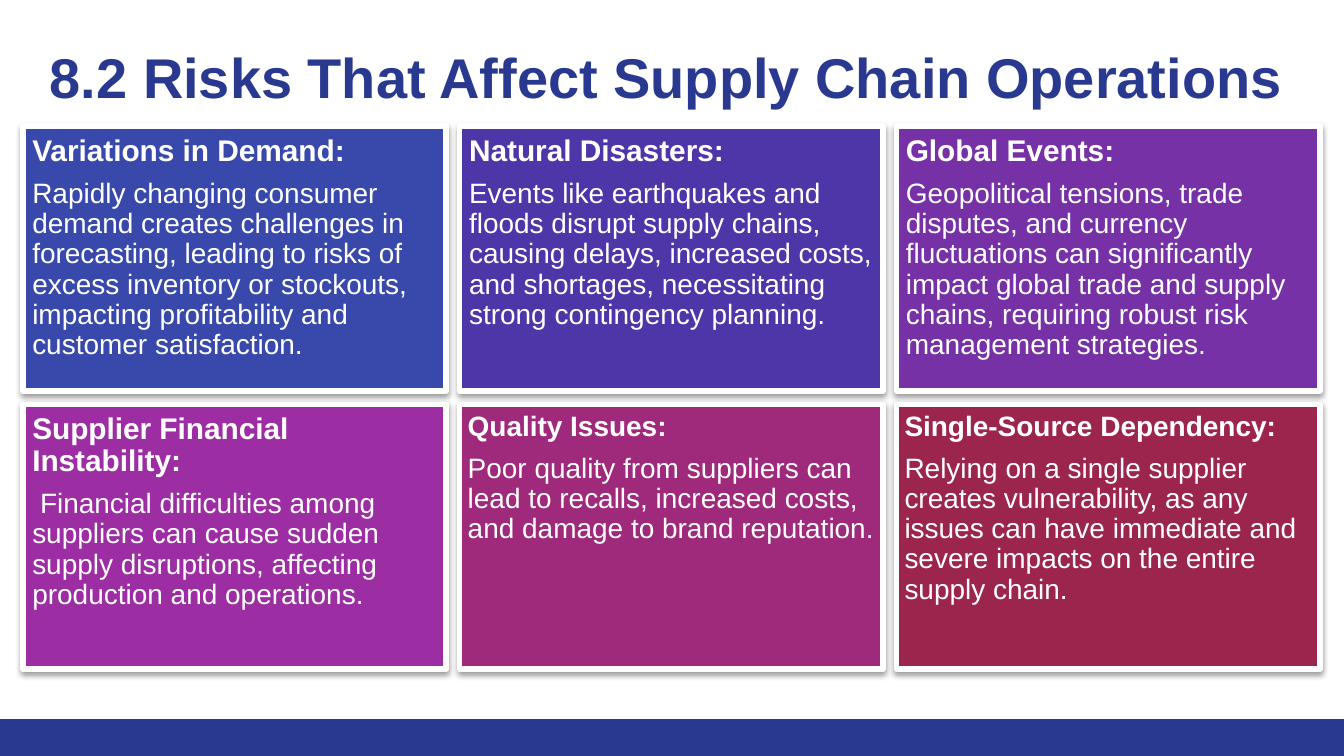
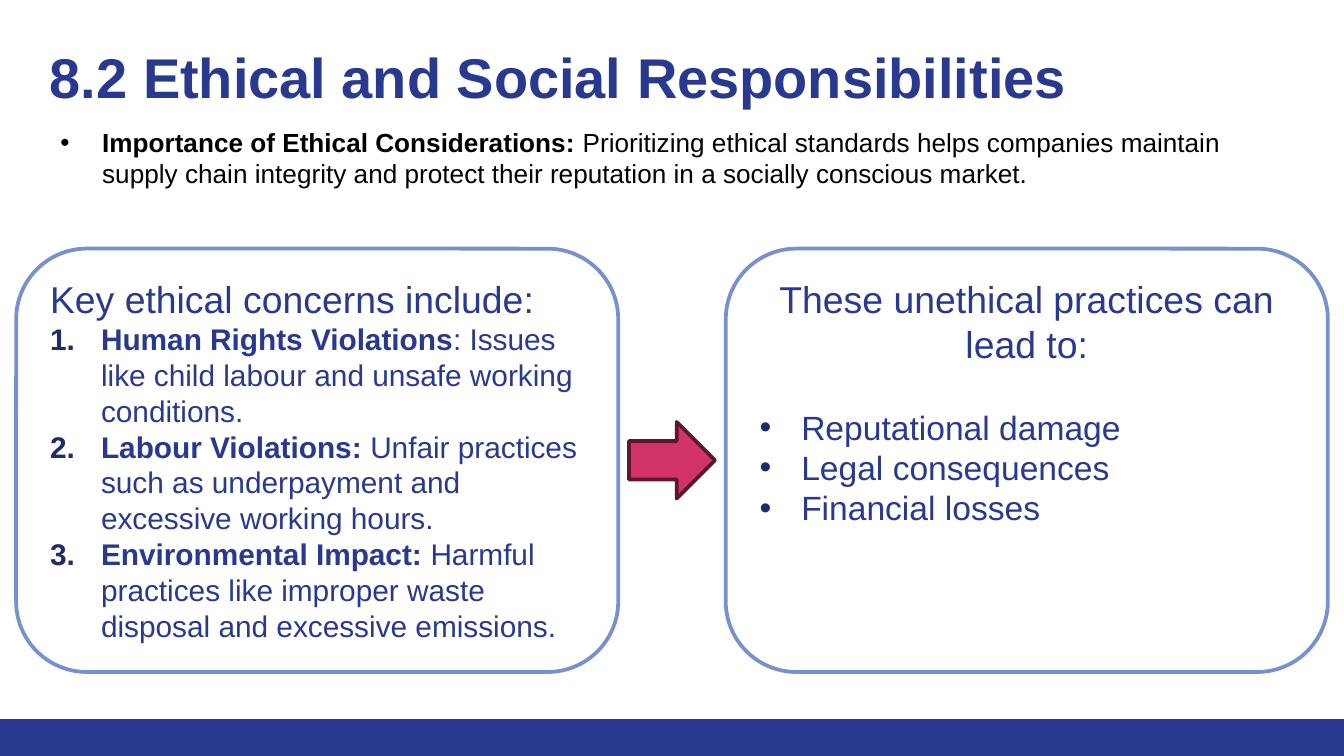
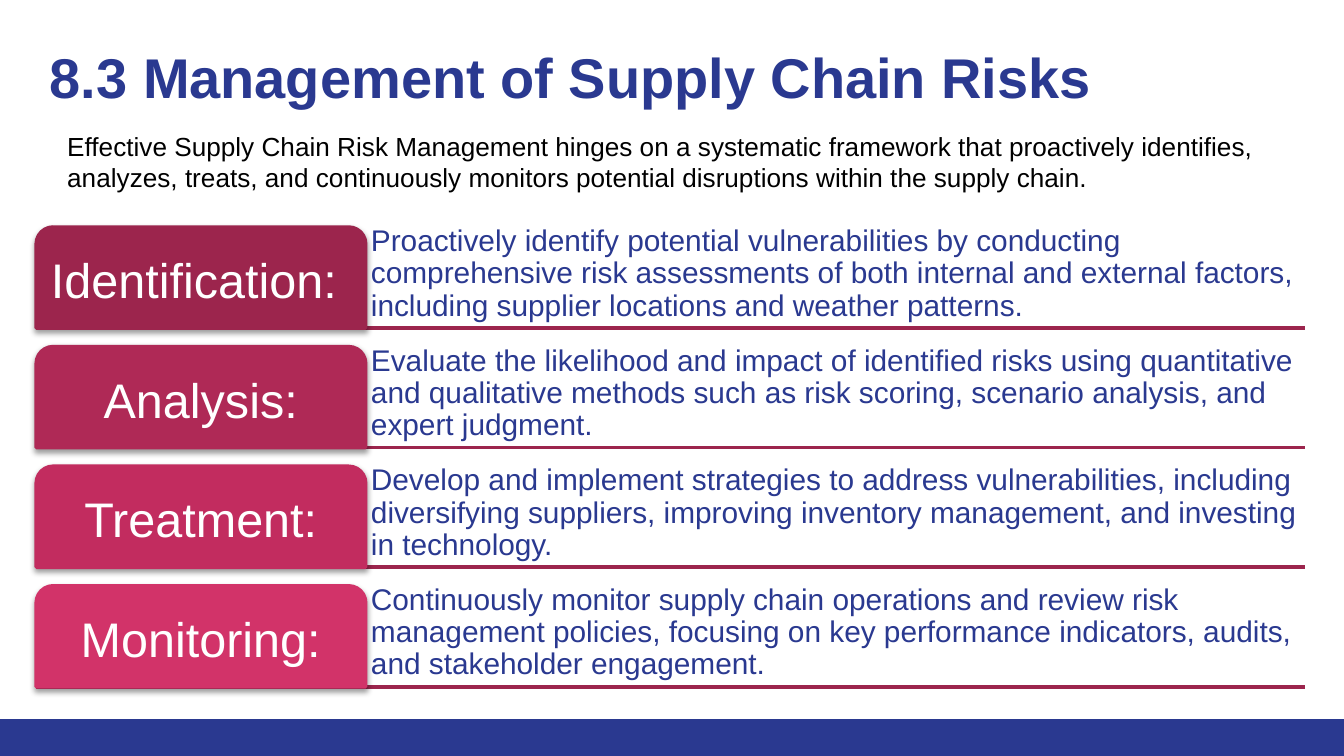
from dataclasses import dataclass
from typing import Optional

from lxml import etree
from pptx import Presentation
from pptx.dml.color import RGBColor
from pptx.enum.shapes import MSO_CONNECTOR, MSO_SHAPE
from pptx.enum.text import MSO_ANCHOR, MSO_AUTO_SIZE, PP_ALIGN
from pptx.oxml.ns import qn
from pptx.util import Inches, Pt

LEFT, CENTER = PP_ALIGN.LEFT, PP_ALIGN.CENTER
TOP, MIDDLE, BOTTOM = MSO_ANCHOR.TOP, MSO_ANCHOR.MIDDLE, MSO_ANCHOR.BOTTOM
NO_FIT, GROW = MSO_AUTO_SIZE.NONE, MSO_AUTO_SIZE.SHAPE_TO_FIT_TEXT
RECTANGLE = MSO_SHAPE.RECTANGLE
ROUNDED = MSO_SHAPE.ROUNDED_RECTANGLE
TAB = MSO_SHAPE.ROUND_2_SAME_RECTANGLE
RIGHT_ARROW = MSO_SHAPE.RIGHT_ARROW
STRAIGHT = MSO_CONNECTOR.STRAIGHT

FONT = "Arial"
NAVY, DARK_NAVY, PALE_BLUE = "2A3990", "202B6C", "7890CD"
WHITE, BLACK = "FFFFFF", "000000"
PINK, WINE, CRIMSON = "D23369", "5C162E", "9C254D"
NUMBERED, DOT, PLAIN = "1.", "•", ""
TITLE_AND_CONTENT, TITLE_ONLY = 1, 5


@dataclass
class Box:
    """Position and size in inches."""

    left: float
    top: float
    width: float
    height: float

    def emu(self) -> tuple:
        """Return the four lengths for a shape call."""
        return tuple(Inches(v) for v in (self.left, self.top, self.width, self.height))


@dataclass
class Line:
    """One paragraph: a bold lead, then regular text."""

    lead: str
    text: str
    size: float
    color: str
    bullet: str = PLAIN
    bullet_color: str = DARK_NAVY
    indent: float = 0
    align: PP_ALIGN = LEFT
    spacing: float = 1.0
    before: float = 0
    after: float = 0


@dataclass
class RiskCard:
    """A coloured card naming one risk."""

    heading: str
    text: str
    fill: str
    heading_size: float = 16
    inset: float = 0.07


@dataclass
class Step:
    """One step of risk management."""

    label: str
    text: str
    fill: str


RISKS = [
    RiskCard("Variations in Demand:", "Rapidly changing consumer demand creates challenges in "
             "forecasting, leading to risks of excess inventory or stockouts, impacting "
             "profitability and customer satisfaction.", "3949AB"),
    RiskCard("Natural Disasters:", "Events like earthquakes and floods disrupt supply chains, "
             "causing delays, increased costs, and shortages, necessitating strong "
             "contingency planning.", "4E35A8"),
    RiskCard("Global Events:", "Geopolitical tensions, trade disputes, and currency "
             "fluctuations can significantly impact global trade and supply chains, "
             "requiring robust risk management strategies.", "7531A5"),
    RiskCard("Supplier Financial Instability:", " Financial difficulties among suppliers can "
             "cause sudden supply disruptions, affecting production and operations.", "9C2DA2"),
    RiskCard("Quality Issues:", "Poor quality from suppliers can lead to recalls, increased "
             "costs, and damage to brand reputation.", "9F297B", 15, 0.06),
    RiskCard("Single-Source Dependency:", "Relying on a single supplier creates vulnerability, "
             "as any issues can have immediate and severe impacts on the entire supply chain.",
             CRIMSON, 15, 0.06),
]

CONCERNS = [
    ("Human Rights Violations", ": Issues like child labour and unsafe working conditions."),
    ("Labour Violations: ", "Unfair practices such as underpayment and excessive working hours."),
    ("Environmental Impact: ",
     "Harmful practices like improper waste disposal and excessive emissions."),
]
OUTCOMES = ["Reputational damage", "Legal consequences", "Financial losses"]

STEPS = [
    Step("Identification: ", "Proactively identify potential vulnerabilities by conducting "
         "comprehensive risk assessments of both internal and external factors, including "
         "supplier locations and weather patterns.", CRIMSON),
    Step("Analysis:", "Evaluate the likelihood and impact of identified risks using "
         "quantitative and qualitative methods such as risk scoring, scenario analysis, "
         "and expert judgment.", "AF2956"),
    Step("Treatment:", "Develop and implement strategies to address vulnerabilities, including "
         "diversifying suppliers, improving inventory management, and investing in "
         "technology.", "C22C5F"),
    Step("Monitoring:", "Continuously monitor supply chain operations and review risk "
         "management policies, focusing on key performance indicators, audits, and "
         "stakeholder engagement.", PINK),
]


def rgb(value: str) -> RGBColor:
    """Turn a hex string into a colour."""
    return RGBColor.from_string(value)


def set_bullet(paragraph, line: Line) -> None:
    """Give a paragraph its indent and its bullet, number or neither."""
    props = paragraph._p.get_or_add_pPr()
    props.set("marL", str(Inches(line.indent)))
    props.set("indent", str(-Inches(line.indent)))
    if line.bullet == PLAIN:
        etree.SubElement(props, qn("a:buNone"))
        return
    color = etree.SubElement(props, qn("a:buClr"))
    etree.SubElement(color, qn("a:srgbClr"), val=line.bullet_color)
    etree.SubElement(props, qn("a:buFont"), typeface=FONT)
    if line.bullet == NUMBERED:
        etree.SubElement(props, qn("a:buAutoNum"), type="arabicPeriod")
    else:
        etree.SubElement(props, qn("a:buChar"), char=line.bullet)


def write(shape, lines: list[Line], insets: tuple = (0.1, 0.05, 0.1, 0.05),
          anchor: MSO_ANCHOR = TOP, fit: MSO_AUTO_SIZE = NO_FIT) -> None:
    """Fill a shape with paragraphs; insets run left, top, right, bottom."""
    frame = shape.text_frame
    frame.word_wrap = True
    frame.auto_size = fit
    frame.vertical_anchor = anchor
    (frame.margin_left, frame.margin_top,
     frame.margin_right, frame.margin_bottom) = (Inches(v) for v in insets)
    for index, line in enumerate(lines):
        paragraph = frame.add_paragraph() if index else frame.paragraphs[0]
        set_bullet(paragraph, line)
        paragraph.alignment = line.align
        paragraph.line_spacing = line.spacing
        paragraph.space_before = Pt(line.before)
        paragraph.space_after = Pt(line.after)
        for words, bold in ((line.lead, True), (line.text, False)):
            if words:
                run = paragraph.add_run()
                run.text = words
                run.font.name = FONT
                run.font.size = Pt(line.size)
                run.font.bold = bold
                run.font.color.rgb = rgb(line.color)


def add_block(slide, kind: MSO_SHAPE, box: Box, fill: str,
              outline: Optional[str] = None, weight: float = 2):
    """Add a flat preset shape."""
    shape = slide.shapes.add_shape(kind, *box.emu())
    shape.shadow.inherit = False
    shape.fill.solid()
    shape.fill.fore_color.rgb = rgb(fill)
    if outline:
        shape.line.color.rgb = rgb(outline)
        shape.line.width = Pt(weight)
    else:
        shape.line.fill.background()
    return shape


def add_soft_shadow(shape) -> None:
    """Cast a soft shadow below a shape."""
    effects = shape.element.spPr.find(qn("a:effectLst"))
    shadow = etree.SubElement(effects, qn("a:outerShdw"), blurRad=str(Pt(3.1)),
                              dist=str(Pt(1.6)), dir="5400000", rotWithShape="0")
    color = etree.SubElement(shadow, qn("a:srgbClr"), val=BLACK)
    etree.SubElement(color, qn("a:alpha"), val="38000")


def add_rule(slide, left: float, right: float, y: float) -> None:
    """Draw a horizontal rule."""
    rule = slide.shapes.add_connector(
        STRAIGHT, Inches(left), Inches(y), Inches(right), Inches(y))
    rule.line.color.rgb = rgb(CRIMSON)
    rule.line.width = Pt(2)
    etree.SubElement(rule.element.spPr, qn("a:effectLst"))


def place(placeholder, box: Box) -> None:
    """Move a placeholder to a box."""
    (placeholder.left, placeholder.top,
     placeholder.width, placeholder.height) = box.emu()


def start_slide(prs, layout: int, title: str, width: float = 9.46):
    """Add a slide with the shared title style."""
    slide = prs.slides.add_slide(prs.slide_layouts[layout])
    heading = slide.shapes.title
    place(heading, Box(0.27, 0.2, width, 0.89))
    write(heading, [Line(title, "", 30, NAVY)], (0.1, 0.12, 0.1, 0.1))
    return slide


def add_intro(slide, box: Box, line: Line) -> None:
    """Put the opening sentence in the body placeholder."""
    body = slide.placeholders[1]
    place(body, box)
    write(body, [line], fit=GROW)


def add_master_band(prs, slide) -> None:
    """Put the footer band on the master so that every slide shows it."""
    band = add_block(slide, RECTANGLE, Box(0, 5.35, 10, 0.28), NAVY)
    prs.slide_master.shapes.element.append(band.element)


def build_risks(prs):
    """Build the grid of risk cards."""
    slide = start_slide(prs, TITLE_ONLY, "8.2 Risks That Affect Supply Chain Operations")
    columns, width, height, gap = 3, 3.15, 1.97, 0.1
    for index, risk in enumerate(RISKS):
        row, column = divmod(index, columns)
        box = Box(0.17 + column * (width + gap), 0.94 + row * (height + gap), width, height)
        card = add_block(slide, RECTANGLE, box, risk.fill, WHITE, 3)
        add_soft_shadow(card)
        write(card, [Line(risk.heading, "", risk.heading_size, WHITE, spacing=0.9, after=6),
                     Line("", risk.text, 15, WHITE, spacing=0.9)], (risk.inset,) * 4)
    return slide


def build_ethics(prs) -> None:
    """Build the concerns, the arrow and the outcomes."""
    slide = start_slide(prs, TITLE_AND_CONTENT, "8.2 Ethical and Social Responsibilities")
    add_intro(slide, Box(0.35, 0.89, 9.31, 0.57), Line(
        "Importance of Ethical Considerations: ",
        "Prioritizing ethical standards helps companies maintain supply chain integrity and "
        "protect their reputation in a socially conscious market.",
        14, BLACK, DOT, BLACK, 0.31))
    concerns = [Line("", "Key ethical concerns include:", 20, NAVY)]
    concerns += [Line(lead, text, 16, NAVY, NUMBERED, indent=0.38) for lead, text in CONCERNS]
    outcomes = [Line("", "These unethical practices can lead to:", 20, NAVY, align=CENTER)]
    outcomes += [Line("", text, 18, NAVY, DOT, indent=0.31, before=0 if index else 22)
                 for index, text in enumerate(OUTCOMES)]
    for left, lines in ((0.12, concerns), (5.4, outcomes)):
        panel = add_block(slide, ROUNDED, Box(left, 1.85, 4.48, 3.15), WHITE, PALE_BLUE)
        write(panel, lines)
    add_block(slide, RIGHT_ARROW, Box(4.68, 3.14, 0.64, 0.57), PINK, WINE)


def build_management(prs) -> None:
    """Build the four steps of risk management."""
    slide = start_slide(prs, TITLE_AND_CONTENT, "8.3 Management of Supply Chain Risks", 9.2)
    add_intro(slide, Box(0.4, 0.92, 9.2, 0.57), Line(
        "", "Effective Supply Chain Risk Management hinges on a systematic framework that "
        "proactively identifies, analyzes, treats, and continuously monitors potential "
        "disruptions within the supply chain.", 14, BLACK))
    left, label_width, text_width, height, pitch = 0.27, 2.45, 6.99, 0.75, 0.89
    text_left = left + label_width
    for index, step in enumerate(STEPS):
        top = 1.69 + index * pitch
        add_rule(slide, left, text_left + text_width, top + height)
        description = slide.shapes.add_textbox(*Box(text_left, top, text_width, height).emu())
        write(description, [Line("", step.text, 16, NAVY, spacing=0.9)], (0.04,) * 4, BOTTOM)
        label = add_block(slide, TAB, Box(left, top, label_width, height), step.fill, step.fill)
        add_soft_shadow(label)
        write(label, [Line("", step.label, 26, WHITE, align=CENTER, spacing=0.9)],
              (0.05, 0.09, 0.05, 0.05), MIDDLE)


def main() -> None:
    """Build and save the presentation."""
    prs = Presentation()
    prs.slide_width = Inches(10)
    prs.slide_height = prs.slide_width * 9 // 16
    risks = build_risks(prs)
    add_master_band(prs, risks)
    build_ethics(prs)
    build_management(prs)
    prs.save("out.pptx")


if __name__ == "__main__":
    main()
